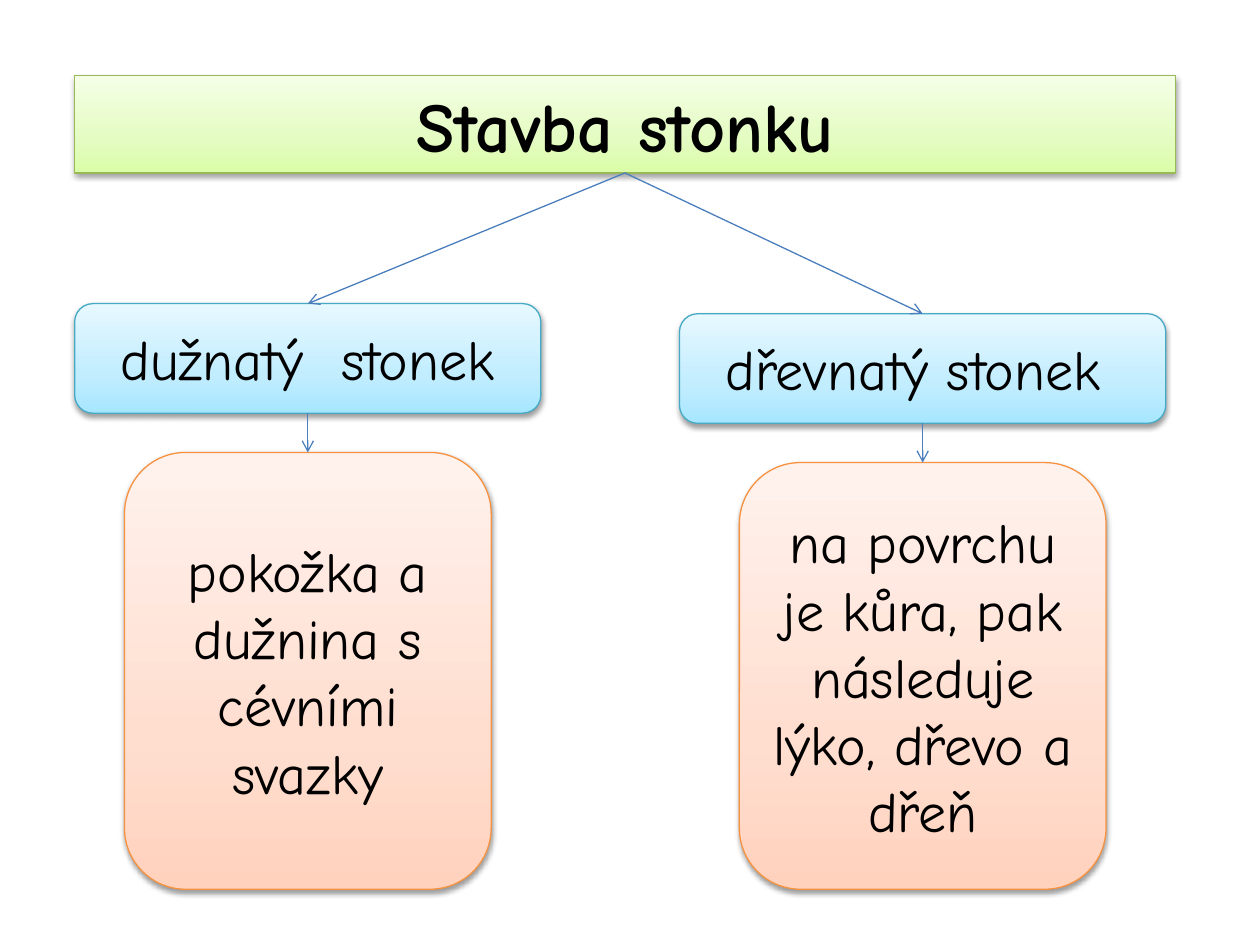
from pptx import Presentation
from pptx.dml.color import RGBColor
from pptx.enum.shapes import MSO_CONNECTOR, MSO_SHAPE
from pptx.enum.text import MSO_ANCHOR, MSO_AUTO_SIZE, PP_ALIGN
from pptx.oxml import parse_xml
from pptx.oxml.ns import nsdecls
from pptx.util import Inches, Pt

WIDE, HIGH = Inches(10), Inches(7.5)
FONT = "Comic Neue"
TOP, BOTTOM = 0, 2

# Line colour, then the gradient from bottom to top
GREEN = "98B955", ("DAFDA7", "E4FCC2", "F5FFE7")
BLUE = "46AAC5", ("A7E6FF", "C1EDFF", "E7F8FF")
PEACH = "F69240", ("FFD2BD", "FFDED0", "FFF2ED")
ARROW = "4B7EBC"

# Percent of the slide's width or height
HEAD_H, GAP, NOTE_W, FLOOR = 11.6, 4.15, 29.1, 94.1
# Middle, top, width of the head, head, note
BRANCHES = [
    (24.43, 32.13, 37, "dužnatý  stonek", "pokožka a dužnina s cévními svazky"),
    (73.23, 33.2, 38.6, "dřevnatý stonek ",
     "na povrchu je kůra, pak následuje lýko, dřevo a dřeň"),
]


def color(code):
    return RGBColor.from_string(code)


def scale(left, top, width, height):
    """Turn percents of the slide into lengths."""
    return [int(part * side / 100) for part, side in
            zip((left, top, width, height), (WIDE, HIGH, WIDE, HIGH))]


def paint(shape, theme):
    """Give the shape its gradient, outline and soft shadow."""
    edge, shades = theme
    stops = "".join(
        f'<a:gs pos="{spot}000"><a:srgbClr val="{shade}"/></a:gs>'
        for spot, shade in zip((0, 35, 100), shades))
    shape._element.spPr.append(parse_xml(
        f'<a:gradFill {nsdecls("a")} rotWithShape="1"><a:gsLst>{stops}</a:gsLst>'
        '<a:lin ang="16200000" scaled="1"/></a:gradFill>'))
    shape.line.color.rgb = color(edge)
    shape.line.width = Pt(0.75)
    shape._element.spPr.append(parse_xml(
        f'<a:effectLst {nsdecls("a")}>'
        '<a:outerShdw blurRad="40000" dist="20000" dir="5400000" rotWithShape="0">'
        '<a:srgbClr val="000000"><a:alpha val="38000"/></a:srgbClr>'
        '</a:outerShdw></a:effectLst>'))


def write(shape, text, size, bold=False):
    frame = shape.text_frame
    frame.word_wrap = True
    frame.auto_size = MSO_AUTO_SIZE.NONE
    frame.vertical_anchor = MSO_ANCHOR.MIDDLE
    frame.text = text
    line = frame.paragraphs[0]
    line.alignment = PP_ALIGN.CENTER
    line.font.name = FONT
    line.font.size = Pt(size)
    line.font.bold = bold
    line.font.color.rgb = color("000000")


def add_title(slide, text):
    title = slide.shapes.title
    title.left, title.top, title.width, title.height = scale(5.9, 8, 87.4, 10.3)
    paint(title, GREEN)
    write(title, text, 40, bold=True)
    return title


def add_box(slide, mid, top, width, height, text, theme):
    """Add a rounded box centred on mid."""
    box = slide.shapes.add_shape(
        MSO_SHAPE.ROUNDED_RECTANGLE, *scale(mid - width / 2, top, width, height))
    paint(box, theme)
    write(box, text, 32)
    return box


def add_arrow(slide, start, end):
    """Join the bottom of one shape to the top of the next."""
    arrow = slide.shapes.add_connector(MSO_CONNECTOR.STRAIGHT, 0, 0, 0, 0)
    arrow.begin_connect(start, BOTTOM)
    arrow.end_connect(end, TOP)
    arrow.line.color.rgb = color(ARROW)
    arrow.line.width = Pt(0.75)
    arrow.line._get_or_add_ln().append(
        parse_xml(f'<a:tailEnd {nsdecls("a")} type="arrow"/>'))
    arrow._element.spPr.append(parse_xml(f'<a:effectLst {nsdecls("a")}/>'))


def add_branch(slide, title, mid, top, width, name, note):
    head = add_box(slide, mid, top, width, HEAD_H, name, BLUE)
    start = top + HEAD_H + GAP
    body = add_box(slide, mid, start, NOTE_W, FLOOR - start, note, PEACH)
    add_arrow(slide, title, head)
    add_arrow(slide, head, body)


def main():
    deck = Presentation()
    deck.slide_width, deck.slide_height = WIDE, HIGH
    slide = deck.slides.add_slide(deck.slide_layouts.get_by_name("Title Only"))
    title = add_title(slide, "Stavba stonku")
    for branch in BRANCHES:
        add_branch(slide, title, *branch)
    deck.save("out.pptx")


if __name__ == "__main__":
    main()
